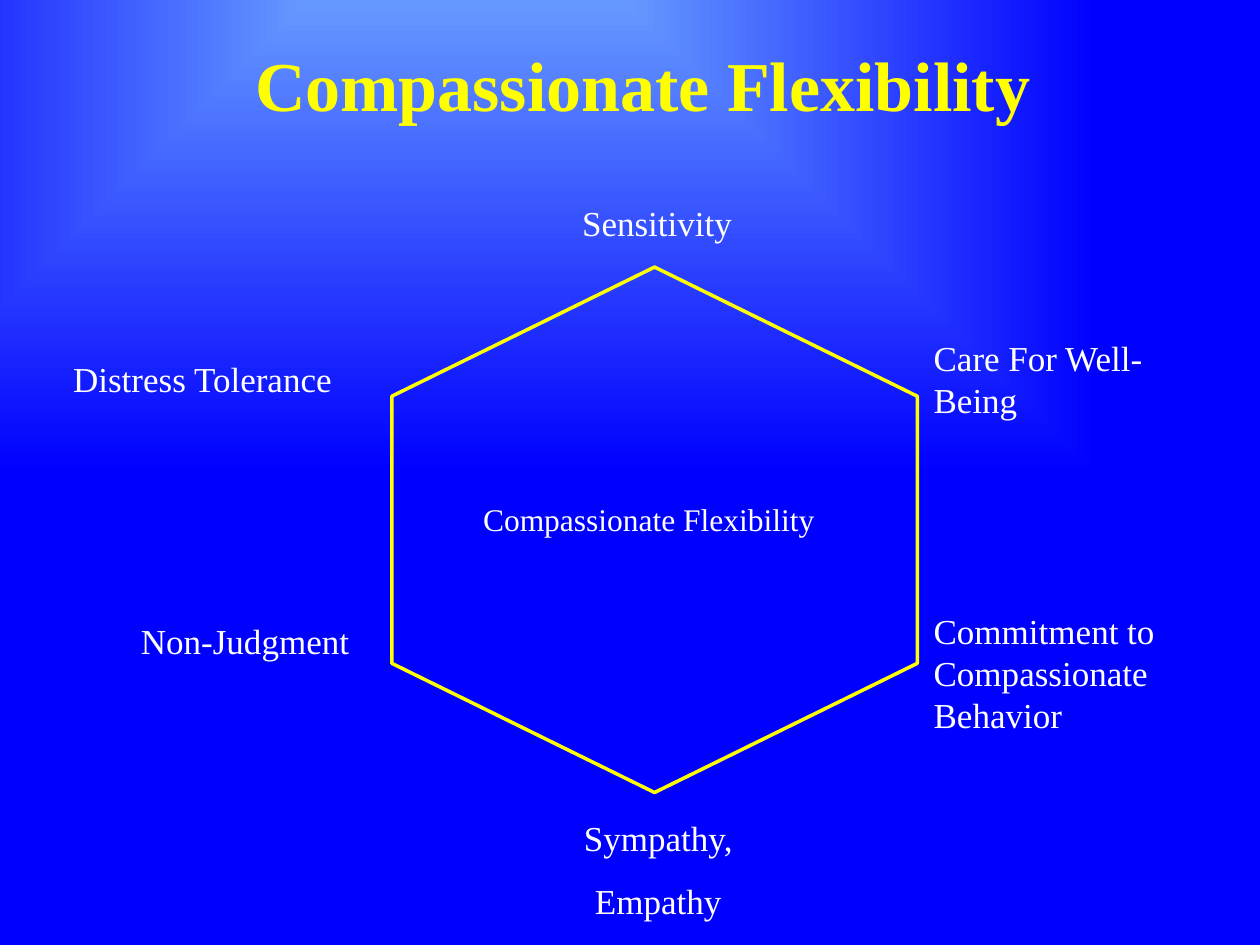
from lxml.etree import SubElement
from pptx import Presentation
from pptx.dml.color import RGBColor
from pptx.enum.text import MSO_ANCHOR, PP_ALIGN
from pptx.oxml.ns import qn
from pptx.util import Inches, Pt

COLORS = {"sky": "6699FF", "blue": "0000FF", "yellow": "FFFF00", "white": "FFFFFF"}
FONT = "Times New Roman"
LEFT, CENTER = PP_ALIGN.LEFT, PP_ALIGN.CENTER

# Process labels around the hexagon: text, left, top, width, height, alignment
PROCESSES = [
    ("Sensitivity", 4.13, 1.55, 2.17, 0.41, CENTER),
    ("Care For Well-Being", 7.36, 2.62, 2.33, 0.73, LEFT),
    ("Commitment to Compassionate Behavior", 7.36, 4.79, 2.5, 1.05, LEFT),
    ("Sympathy,\nEmpathy", 4.06, 6.43, 2.33, 0.89, CENTER),
    ("Non-Judgment", 0.78, 4.87, 2.33, 0.41, CENTER),
    ("Distress Tolerance", 0.53, 2.79, 2.58, 0.88, LEFT),
]


def rgb(name):
    return RGBColor.from_string(COLORS[name])


def paint_background(slide):
    """Glow that spreads in rectangles from a point above the top edge."""
    fill = slide.background.fill
    fill.gradient()
    for stop, name in zip(fill.gradient_stops, ("sky", "blue")):
        stop.color.rgb = rgb(name)
    gradient = slide.background._cSld.find(".//" + qn("a:gradFill"))
    gradient.remove(gradient.find(qn("a:lin")))
    glow = SubElement(gradient, qn("a:path"), path="rect")
    SubElement(glow, qn("a:fillToRect"), l="37500", t="-20000", r="62500", b="120000")


def add_outline(slide, corners):
    """Closed, unfilled freeform through corners given in inches."""
    points = [(Inches(x), Inches(y)) for x, y in corners]
    builder = slide.shapes.build_freeform(*points[0])
    builder.add_line_segments(points[1:], close=True)
    outline = builder.convert_to_shape()
    outline.shadow.inherit = False
    outline.fill.background()
    return outline


def add_label(slide, text, left, top, width, height, align,
              size=20, color="white", bold=False, space_before=12):
    right, bottom = left + width, top + height
    label = add_outline(slide, [(left, top), (right, top), (right, bottom), (left, bottom)])
    label.line.fill.background()
    frame = label.text_frame
    frame.word_wrap = True
    frame.vertical_anchor = MSO_ANCHOR.TOP
    frame.margin_left = frame.margin_right = Inches(0.05)
    frame.margin_top = frame.margin_bottom = Inches(0.05)
    frame.text = text
    for paragraph in frame.paragraphs:
        paragraph.alignment = align
        paragraph.space_before = Pt(space_before)
        for run in paragraph.runs:
            run.font.name = FONT
            run.font.size = Pt(size)
            run.font.bold = bold
            run.font.color.rgb = rgb(color)


def add_hexagon(slide, left, top, size, half_side):
    """Hexagon lying on a side, turned so that a corner points up."""
    radius = size / 2
    center_x, center_y = left + radius, top + radius
    offsets = [(-half_side, -radius), (-radius, 0), (-half_side, radius),
               (half_side, radius), (radius, 0), (half_side, -radius)]
    hexagon = add_outline(slide, [(center_x + dx, center_y + dy) for dx, dy in offsets])
    hexagon.rotation = 90
    hexagon.line.color.rgb = rgb("yellow")
    hexagon.line.width = Pt(2)


def main():
    deck = Presentation()
    deck.slide_width, deck.slide_height = Inches(10), Inches(7.5)
    slide = deck.slides.add_slide(deck.slide_layouts[6])
    paint_background(slide)

    # Title
    add_label(slide, "Compassionate Flexibility", 1.14, 0.28, 7.92, 0.73, CENTER,
              size=40, color="yellow", bold=True, space_before=0)

    # Hexagon with its core concept
    add_hexagon(slide, 3.11, 2.12, size=4.17, half_side=1.06)
    add_label(slide, "Compassionate Flexibility", 3.58, 3.92, 3.14, 0.67, CENTER,
              size=18, space_before=10)

    # Six processes
    for process in PROCESSES:
        add_label(slide, *process)

    deck.save("out.pptx")


if __name__ == "__main__":
    main()
